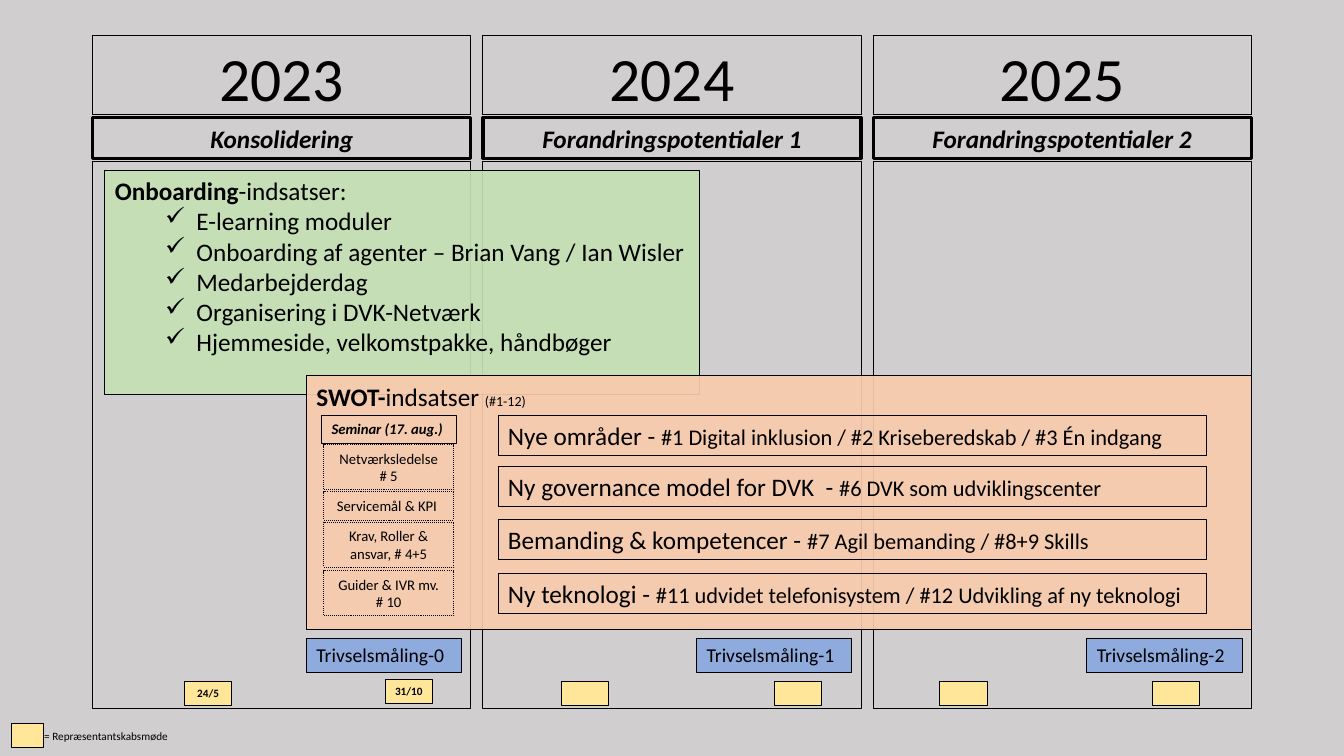
import dataclasses

import pptx
import pptx.dml.color
import pptx.enum.dml
import pptx.enum.shapes
import pptx.enum.text
import pptx.oxml
import pptx.oxml.ns
import pptx.util
from pptx.util import Inches


@dataclasses.dataclass(frozen=True)
class Theme:
    font: str = "Calibri"
    ink: str = "000000"
    background: str = "D0CECE"
    green: str = "C5E0B4"
    peach: str = "F8CBAD"
    blue: str = "8FAADC"
    yellow: str = "FFE699"
    year: float = 44
    heading: float = 18
    detail: float = 16
    survey: float = 14
    seminar: float = 10.5
    note: float = 10
    small: float = 8


T = Theme()
COL_X, COL_STEP, COL_W = 0.92, 3.87, 3.75
YEARS = [
    ("2023", "Konsolidering"),
    ("2024", "Forandringspotentialer 1"),
    ("2025", "Forandringspotentialer 2"),
]
ONBOARDING = [
    "E-learning moduler",
    "Onboarding af agenter – Brian Vang / Ian Wisler",
    "Medarbejderdag",
    "Organisering i DVK-Netværk",
    "Hjemmeside, velkomstpakke, håndbøger",
]
# top, height, lines
SEMINAR = [
    (4.41, 0.45, ["Netværksledelse", "# 5"]),
    (4.88, 0.28, ["Servicemål & KPI "]),
    (5.18, 0.45, ["Krav, Roller & ansvar, # 4+5"]),
    (5.66, 0.45, ["Guider & IVR mv. # 10"]),
]
# top, theme, details
SWOT = [
    (4.12, "Nye områder - ", "#1 Digital inklusion / #2 Kriseberedskab / #3 Én indgang"),
    (4.63, "Ny governance model for DVK  - ", "#6 DVK som udviklingscenter"),
    (5.15, "Bemanding & kompetencer - ", "#7 Agil bemanding / #8+9 Skills"),
    (5.69, "Ny teknologi - ", "#11 udvidet telefonisystem / #12 Udvikling af ny teknologi"),
]
MEETING_X = [5.57, 7.68, 9.32, 11.43]


def rgb(color):
    return pptx.dml.color.RGBColor.from_string(color)


def add_run(p, text, size=T.heading, bold=False, italic=False):
    r = p.add_run()
    r.text = text
    r.font.name, r.font.size = T.font, pptx.util.Pt(size)
    r.font.bold, r.font.italic = bold, italic
    r.font.color.rgb = rgb(T.ink)


def add_paragraph(tf, text, center=False, **fmt):
    """Fill the first paragraph while it is empty, then append."""
    p = tf.paragraphs[0]
    if p.runs:
        p = tf.add_paragraph()
    align = pptx.enum.text.PP_ALIGN
    p.alignment = align.CENTER if center else align.LEFT
    add_run(p, text, **fmt)
    return p


def add_check_item(tf, text):
    p = add_paragraph(tf, text)
    p.level = 1
    pPr = p._p.get_or_add_pPr()
    pPr.set("marL", str(Inches(0.81)))
    pPr.set("indent", str(Inches(-0.31)))
    bullet = pptx.oxml.parse_xml(
        f'<a:buChar {pptx.oxml.ns.nsdecls("a")} char="✓"/>')
    pPr.append(bullet)


def prepare_text(sp):
    tf = sp.text_frame
    tf.word_wrap = True
    tf.auto_size = pptx.enum.text.MSO_AUTO_SIZE.NONE
    tf.vertical_anchor = pptx.enum.text.MSO_ANCHOR.TOP
    return tf


def add_box(s, x, y, w, h, fill=None, alpha=None, line=0.75, dotted=False):
    sp = s.shapes.add_shape(pptx.enum.shapes.MSO_SHAPE.RECTANGLE,
                            Inches(x), Inches(y), Inches(w), Inches(h))
    sp.shadow.inherit = False
    if fill:
        sp.fill.solid()
        sp.fill.fore_color.rgb = rgb(fill)
    else:
        sp.fill.background()
    if alpha:
        clr = sp._element.spPr.find(".//" + pptx.oxml.ns.qn("a:srgbClr"))
        clr.append(pptx.oxml.parse_xml(
            f'<a:alpha {pptx.oxml.ns.nsdecls("a")} val="{alpha * 1000}"/>'))
    sp.line.color.rgb = rgb(T.ink)
    sp.line.width = pptx.util.Pt(line)
    if dotted:
        sp.line.dash_style = pptx.enum.dml.MSO_LINE.ROUND_DOT
    return prepare_text(sp)


def add_meeting(s, x, y, date=None, w=0.47):
    tf = add_box(s, x, y, w, 0.24, fill=T.yellow)
    if date:
        # The date stays on one line, with narrow side margins
        tf.word_wrap = False
        tf.margin_left = tf.margin_right = Inches(0.02)
        add_paragraph(tf, date, center=True, size=T.small, bold=True)


def add_columns(s):
    for i, (year, title) in enumerate(YEARS):
        x = COL_X + i * COL_STEP
        tf = add_box(s, x, 0.35, COL_W, 0.79)
        add_paragraph(tf, year, center=True, size=T.year)
        tf = add_box(s, x, 1.17, COL_W, 0.4, line=2.25)
        add_paragraph(tf, title, center=True, bold=True, italic=True)
        add_box(s, x, 1.6, COL_W, 5.43)


def add_onboarding(s):
    tf = add_box(s, 1.04, 1.69, 5.9, 2.22, fill=T.green, alpha=92)
    p = add_paragraph(tf, "Onboarding", bold=True)
    add_run(p, "-indsatser:")
    for item in ONBOARDING:
        add_check_item(tf, item)


def add_swot(s):
    tf = add_box(s, 3.04, 3.73, 9.37, 2.52, fill=T.peach, alpha=92)
    p = add_paragraph(tf, "SWOT-", bold=True)
    add_run(p, "indsatser ")
    add_run(p, "(#1-12)", size=T.note)

    # Seminar topics
    tf = add_box(s, 3.19, 4.12, 1.34, 0.28, line=1)
    add_paragraph(tf, "Seminar (17. aug.)", size=T.seminar, bold=True, italic=True)
    for y, h, lines in SEMINAR:
        tf = add_box(s, 3.21, y, 1.29, h, dotted=True)
        for text in lines:
            add_paragraph(tf, text, center=True, size=T.seminar)

    # Themes
    for y, theme, details in SWOT:
        p = add_paragraph(add_box(s, 4.94, y, 7.03, 0.4), theme)
        add_run(p, details, size=T.detail)


def add_timeline(s):
    # Wellbeing surveys
    for i in range(len(YEARS)):
        tf = add_box(s, 3.04 + i * COL_STEP, 6.33, 1.54, 0.34, fill=T.blue)
        add_paragraph(tf, f"Trivselsmåling-{i}", size=T.survey)

    # Council meetings
    add_meeting(s, 1.83, 6.76, "24/5")
    add_meeting(s, 3.82, 6.74, "31/10")
    for x in MEETING_X:
        add_meeting(s, x, 6.76)


def add_legend(s):
    add_meeting(s, 0.11, 7.18, w=0.32)
    sp = s.shapes.add_textbox(Inches(0.34), Inches(7.19), Inches(1.57), Inches(0.24))
    add_paragraph(prepare_text(sp), "= Repræsentantskabsmøde", size=T.small)


def main():
    prs = pptx.Presentation()
    prs.slide_width, prs.slide_height = Inches(13.33), Inches(7.5)
    s = prs.slides.add_slide(prs.slide_layouts[6])
    s.background.fill.solid()
    s.background.fill.fore_color.rgb = rgb(T.background)
    add_columns(s)
    add_onboarding(s)
    add_swot(s)
    add_timeline(s)
    add_legend(s)
    prs.save("out.pptx")


if __name__ == "__main__":
    main()
